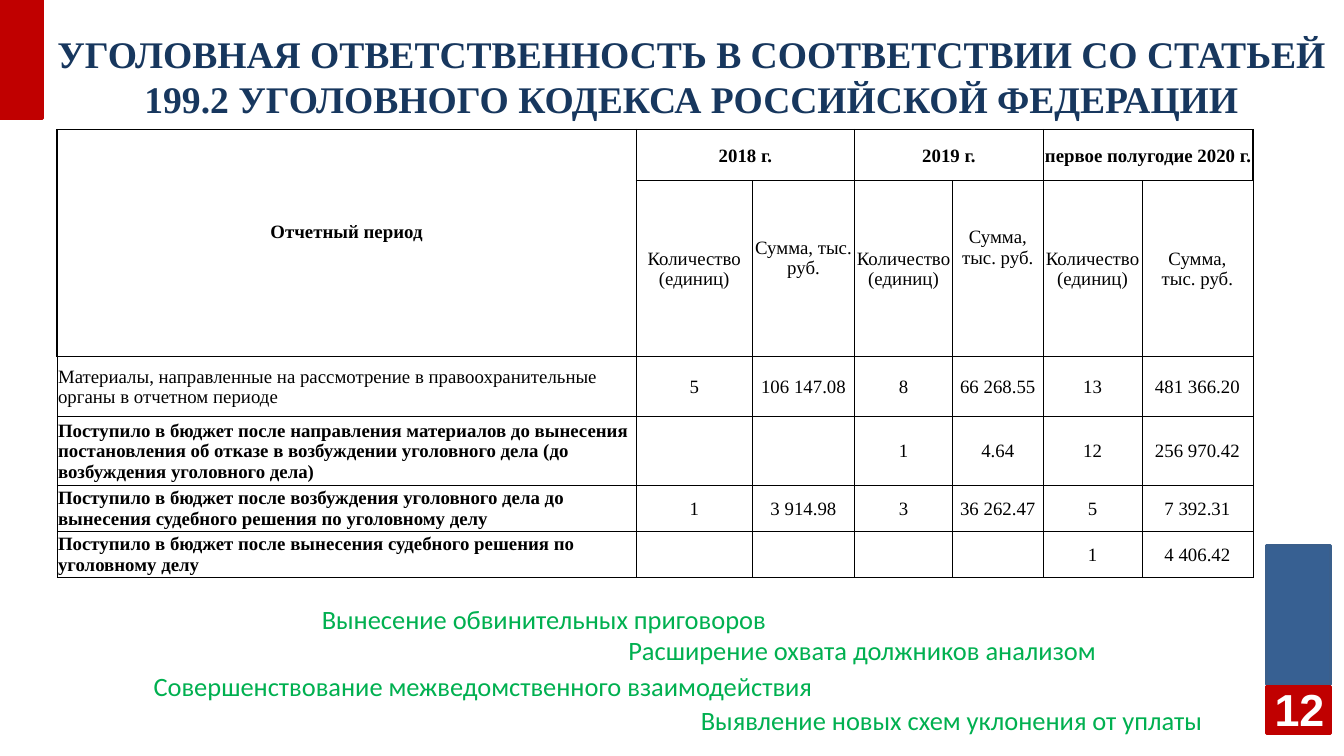
from lxml.etree import SubElement
from pptx import Presentation
from pptx.dml.color import RGBColor
from pptx.enum.shapes import MSO_SHAPE
from pptx.enum.text import MSO_ANCHOR as Anchor, PP_ALIGN as Align
from pptx.oxml.ns import qn
from pptx.util import Inches, Pt

COLORS = {
    "red": "C00000", "blue": "376092", "blue_line": "3A5F8C", "navy": "17375E",
    "green": "00B050", "white": "FFFFFF", "black": "000000",
}
SERIF = "Times New Roman"

TITLE = ("УГОЛОВНАЯ ОТВЕТСТВЕННОСТЬ В СООТВЕТСТВИИ СО СТАТЬЕЙ 199.2 "
         "УГОЛОВНОГО КОДЕКСА РОССИЙСКОЙ ФЕДЕРАЦИИ")

COLUMN_WIDTHS = [5.99, 1.2, 1.06, 1.01, 0.94, 1.02, 1.15]
ROW_HEIGHTS = [0.53, 1.82, 0.62, 0.65, 0.43, 0.43]
COUNT, SUM = "Количество (единиц)", "Сумма, тыс. руб."
REPORT = [
    ["Отчетный период", "2018 г.", "", "2019 г.", "", "первое полугодие 2020 г.", ""],
    ["", COUNT, SUM, COUNT, SUM, COUNT, "Сумма,\nтыс. руб."],
    ["Материалы, направленные на рассмотрение в правоохранительные органы в отчетном периоде",
     "5", "106 147.08", "8", "66 268.55", "13", "481 366.20"],
    ["Поступило в бюджет после направления материалов до вынесения постановления "
     "об отказе в возбуждении уголовного дела (до возбуждения уголовного дела)",
     "", "", "1", "4.64", "12", "256 970.42"],
    ["Поступило в бюджет после возбуждения уголовного дела до вынесения "
     "судебного решения по уголовному делу",
     "1", "3 914.98", "3", "36 262.47", "5", "7 392.31"],
    ["Поступило в бюджет после вынесения судебного решения по уголовному делу",
     "", "", "", "", "1", "4 406.42"],
]
# Headings that sit above the middle of their cell: (row, column) -> bottom margin
RAISED = {(0, 0): 0.23, (1, 2): 0.23, (1, 4): 0.45}

MEASURES = [
    ("Вынесение обвинительных приговоров", 3.23, 6.19, 4.9),
    ("Расширение охвата должников анализом", 6.4, 6.51, 5.14),
    ("Совершенствование межведомственного взаимодействия", 1.49, 6.88, 7.26),
    ("Выявление новых схем уклонения от уплаты", 7.15, 7.23, 5.48),
]


def color(name):
    return RGBColor.from_string(COLORS[name])


def style_text(frame, font, size, tint, bold=False, align=Align.LEFT):
    for paragraph in frame.paragraphs:
        paragraph.alignment = align
        for run in paragraph.runs:
            run.font.name = font
            run.font.size = Pt(size)
            run.font.bold = bold
            run.font.color.rgb = color(tint)


def add_block(slide, box, fill, line):
    block = slide.shapes.add_shape(MSO_SHAPE.RECTANGLE, *map(Inches, box))
    block.shadow.inherit = False
    block.fill.solid()
    block.fill.fore_color.rgb = color(fill)
    block.line.color.rgb = color(line)
    block.line.width = Pt(2)


def add_label(slide, box, text, side_inset=0.1):
    frame = slide.shapes.add_textbox(*map(Inches, box)).text_frame
    frame.word_wrap = True
    frame.margin_left = frame.margin_right = Inches(side_inset)
    frame.text = text
    return frame


def add_title(slide, box):
    frame = add_label(slide, box, TITLE, 0)
    frame.vertical_anchor = Anchor.MIDDLE
    style_text(frame, SERIF, 28, "navy", True, Align.CENTER)


def add_page_marker(slide, box):
    left, top, width, height = box
    number_height = 0.49
    number_top = top + height - number_height
    add_block(slide, (left, top, width, 1.44), "blue", "blue_line")
    add_block(slide, (left, number_top, width, number_height), "red", "red")
    frame = add_label(slide, (left - 0.02, number_top + 0.02, width + 0.06, 0.42), "12", 0)
    frame.vertical_anchor = Anchor.MIDDLE
    style_text(frame, "Arial", 33.4, "white", True, Align.CENTER)


def set_borders(cell, width):
    properties = cell._tc.get_or_add_tcPr()
    for side in ("a:lnL", "a:lnR", "a:lnT", "a:lnB"):
        line = SubElement(properties, qn(side), w=str(int(Pt(width))))
        fill = SubElement(line, qn("a:solidFill"))
        SubElement(fill, qn("a:srgbClr"), val=COLORS["black"])


def add_report_table(slide, left, top):
    box = (left, top, sum(COLUMN_WIDTHS), sum(ROW_HEIGHTS))
    table = slide.shapes.add_table(
        len(ROW_HEIGHTS), len(COLUMN_WIDTHS), *map(Inches, box)).table
    table.first_row = table.horz_banding = False
    for column, width in zip(table.columns, COLUMN_WIDTHS):
        column.width = Inches(width)
    for row, height in zip(table.rows, ROW_HEIGHTS):
        row.height = Inches(height)

    for r, values in enumerate(REPORT):
        for c, value in enumerate(values):
            cell = table.cell(r, c)
            set_borders(cell, 1 if r == 0 else 0.5)
            cell.fill.solid()
            cell.fill.fore_color.rgb = color("white")
            cell.vertical_anchor = Anchor.MIDDLE
            cell.margin_left = cell.margin_right = cell.margin_top = Inches(0.01)
            cell.margin_bottom = Inches(RAISED.get((r, c), 0))
            cell.text_frame.text = value
            bold = r == 0 or (c == 0 and r > 2)
            align = Align.LEFT if c == 0 and r > 1 else Align.CENTER
            style_text(cell.text_frame, SERIF, 14, "black", bold, align)

    # Merged headings
    table.cell(0, 0).merge(table.cell(1, 0))
    for c in (1, 3, 5):
        table.cell(0, c).merge(table.cell(0, c + 1))


def add_measures(slide):
    for text, left, top, width in MEASURES:
        frame = add_label(slide, (left, top, width, 0.43), text)
        style_text(frame, "Calibri", 19.7, "green")


def main():
    deck = Presentation()
    deck.slide_width, deck.slide_height = Inches(13.9), Inches(7.82)
    slide = deck.slides.add_slide(deck.slide_layouts[6])
    add_block(slide, (0, 0, 0.44, 1.23), "red", "red")
    add_page_marker(slide, (13.1, 5.64, 0.66, 1.95))
    add_title(slide, (0.58, 0.46, 13.14, 0.66))
    add_report_table(slide, 0.59, 1.34)
    add_measures(slide)
    deck.save("out.pptx")


if __name__ == "__main__":
    main()
